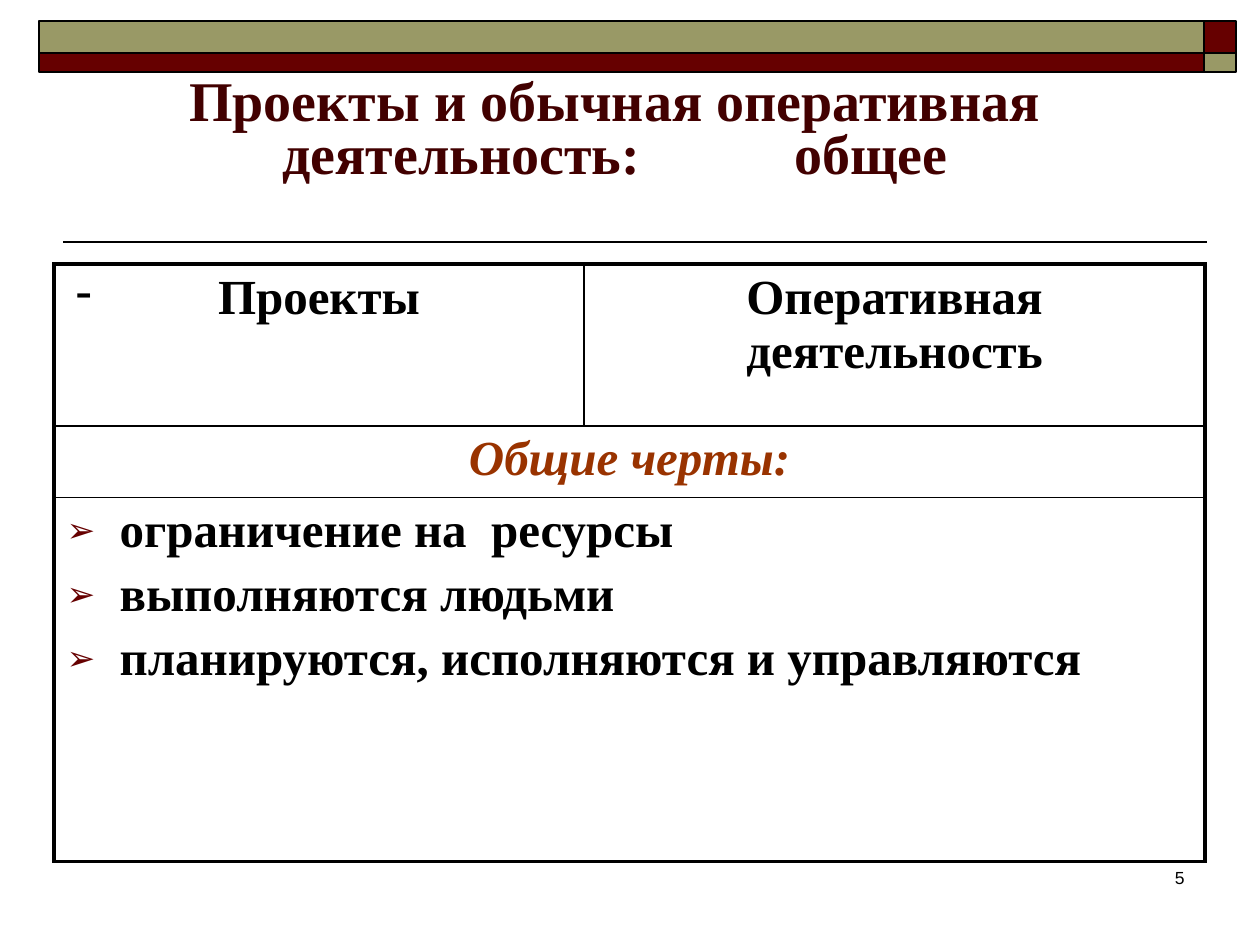
import pptx
import pptx.dml.color
import pptx.enum.shapes
import pptx.enum.text
import pptx.oxml
import pptx.oxml.ns
import pptx.util
from lxml import etree

RGBColor = pptx.dml.color.RGBColor
ALIGN = pptx.enum.text.PP_ALIGN
ANCHOR = pptx.enum.text.MSO_ANCHOR
SHAPE = pptx.enum.shapes.MSO_SHAPE

BLACK = RGBColor(0x00, 0x00, 0x00)
MAROON = RGBColor(0x66, 0x00, 0x00)
DARK_MAROON = RGBColor(0x42, 0x00, 0x00)
OLIVE = RGBColor(0x99, 0x99, 0x66)
RUST = RGBColor(0x99, 0x33, 0x00)

SERIF = "Times New Roman"
PX_PER_INCH = 126
HEADERS = ["Проекты", "Оперативная деятельность"]
COMMON_TRAITS = [
    "ограничение на  ресурсы",
    "выполняются людьми",
    "планируются, исполняются и управляются",
]


def px(length):
    return pptx.util.Emu(round(length * 914400 / PX_PER_INCH))


def place(shape, box):
    shape.left, shape.top, shape.width, shape.height = map(px, box)


def add_element(parent, tag, **attributes):
    element = etree.SubElement(parent, pptx.oxml.ns.qn(tag))
    for name, value in attributes.items():
        element.set(name, str(value))
    return element


def format_para(para, size, color=BLACK, align=ALIGN.LEFT, font=SERIF, bold=True, italic=False):
    para.alignment = align
    para.space_before = pptx.util.Pt(0)
    for span in para.runs:
        span.font.name = font
        span.font.size = pptx.util.Pt(size)
        span.font.bold = bold
        span.font.italic = italic
        span.font.color.rgb = color


def add_banner(page, box):
    left, top, width, height = box
    corner, upper = 32, 32
    wide, lower = width - corner, height - upper
    tiles = [
        (wide, 0, corner, upper, MAROON),
        (0, 0, wide, upper, OLIVE),
        (0, upper, wide, lower, MAROON),
        (wide, upper, corner, lower, OLIVE),
    ]
    for x, y, tile_width, tile_height, color in tiles:
        tile = page.shapes.add_shape(SHAPE.RECTANGLE, 0, 0, 0, 0)
        place(tile, (left + x, top + y, tile_width, tile_height))
        tile.shadow.inherit = False
        tile.fill.solid()
        tile.fill.fore_color.rgb = color
        tile.line.color.rgb = BLACK
        tile.line.width = pptx.util.Pt(1)


def add_rule(page, box):
    left, top, width, height = box
    rule = page.shapes.add_connector(
        pptx.enum.shapes.MSO_CONNECTOR.STRAIGHT,
        px(left), px(top), px(left + width), px(top + height),
    )
    rule.line.color.rgb = BLACK
    rule.line.width = pptx.util.Pt(1)
    add_element(rule._element.spPr, "a:effectLst")


def add_title(page, box):
    title = page.shapes.title
    place(title, box)
    frame = title.text_frame
    frame.vertical_anchor = ANCHOR.BOTTOM
    para = frame.paragraphs[0]
    for text in ("Проекты и обычная оперативная деятельность:", " ", "общее"):
        para.add_run().text = text
    format_para(para, 32, DARK_MAROON, ALIGN.CENTER)
    para.line_spacing = 0.8
    para.runs[1].font._element.set("spc", "8000")


def add_body(page, box):
    body = page.placeholders[1]
    place(body, box)
    body.text_frame.text = "-"
    para = body.text_frame.paragraphs[0]
    format_para(para, 28)
    properties = para._p.get_or_add_pPr()
    properties.set("marL", "0")
    properties.set("indent", "0")
    add_element(properties, "a:buNone")


def add_page_number(page, box):
    number = page.shapes.add_textbox(0, 0, 0, 0)
    place(number, box)
    number.text_frame.word_wrap = True
    number.text_frame.text = "5"
    format_para(number.text_frame.paragraphs[0], 10, align=ALIGN.RIGHT, font="Arial", bold=False)


def add_bullet(para):
    properties = para._p.get_or_add_pPr()
    properties.set("marL", str(px(53)))
    properties.set("indent", str(-px(53)))
    color = add_element(properties, "a:buClr")
    add_element(color, "a:srgbClr", val=MAROON)
    add_element(properties, "a:buSzPct", val=70000)
    add_element(properties, "a:buFont", typeface="Arial")
    add_element(properties, "a:buChar", char="➢")


def set_borders(cell, widths):
    properties = cell._tc.get_or_add_tcPr()
    for side, width in zip("LRTB", widths):
        line = add_element(properties, f"a:ln{side}", w=pptx.util.Pt(width))
        fill = add_element(line, "a:solidFill")
        add_element(fill, "a:srgbClr", val=BLACK)
    cell.fill.background()


def add_comparison_table(page, box):
    column_widths = [530, 621]
    row_heights = [162, 69, 364]
    table = page.shapes.add_table(3, 2, *map(px, box)).table
    table.first_row = False
    table.horz_banding = False
    for column, width in zip(table.columns, column_widths):
        column.width = px(width)
    for row, height in zip(table.rows, row_heights):
        row.height = px(height)
    for row in (1, 2):
        table.cell(row, 0).merge(table.cell(row, 1))

    outer, inner = 2.25, 1
    set_borders(table.cell(0, 0), (outer, inner, outer, inner))
    set_borders(table.cell(0, 1), (inner, outer, outer, inner))
    set_borders(table.cell(1, 0), (outer, outer, inner, inner))
    set_borders(table.cell(2, 0), (outer, outer, inner, outer))

    for column, header in enumerate(HEADERS):
        cell = table.cell(0, column)
        cell.text_frame.text = header
        format_para(cell.text_frame.paragraphs[0], 28, align=ALIGN.CENTER)

    heading = table.cell(1, 0).text_frame
    heading.text = "Общие черты:"
    format_para(heading.paragraphs[0], 28, RUST, ALIGN.CENTER, italic=True)

    traits = table.cell(2, 0).text_frame
    traits.text = "\n".join(COMMON_TRAITS)
    for index, para in enumerate(traits.paragraphs):
        format_para(para, 28)
        para.space_before = pptx.util.Pt(5.6 if index else 0)
        add_bullet(para)


def main():
    deck = pptx.Presentation()
    deck.slide_width, deck.slide_height = px(1260), px(945)
    page = deck.slides.add_slide(deck.slide_layouts[1])
    add_rule(page, (63, 242, 1144, 0))
    add_banner(page, (39, 21, 1197, 51))
    add_page_number(page, (935, 861, 262, 63))
    add_title(page, (44, 76, 1142, 116))
    add_body(page, (63, 252, 557, 592))
    add_comparison_table(page, (54, 264, 1151, 595))
    deck.save("out.pptx")


if __name__ == "__main__":
    main()
